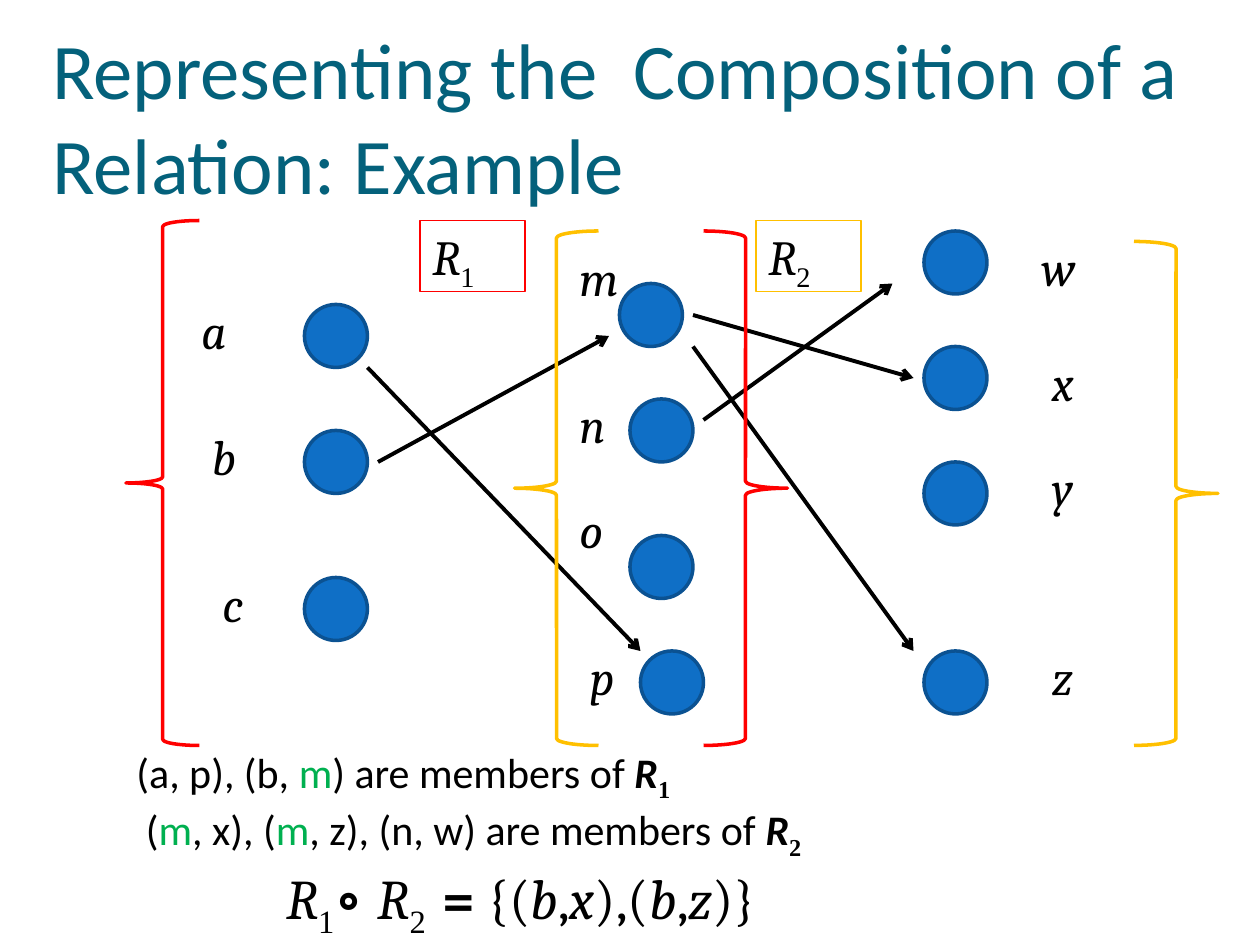
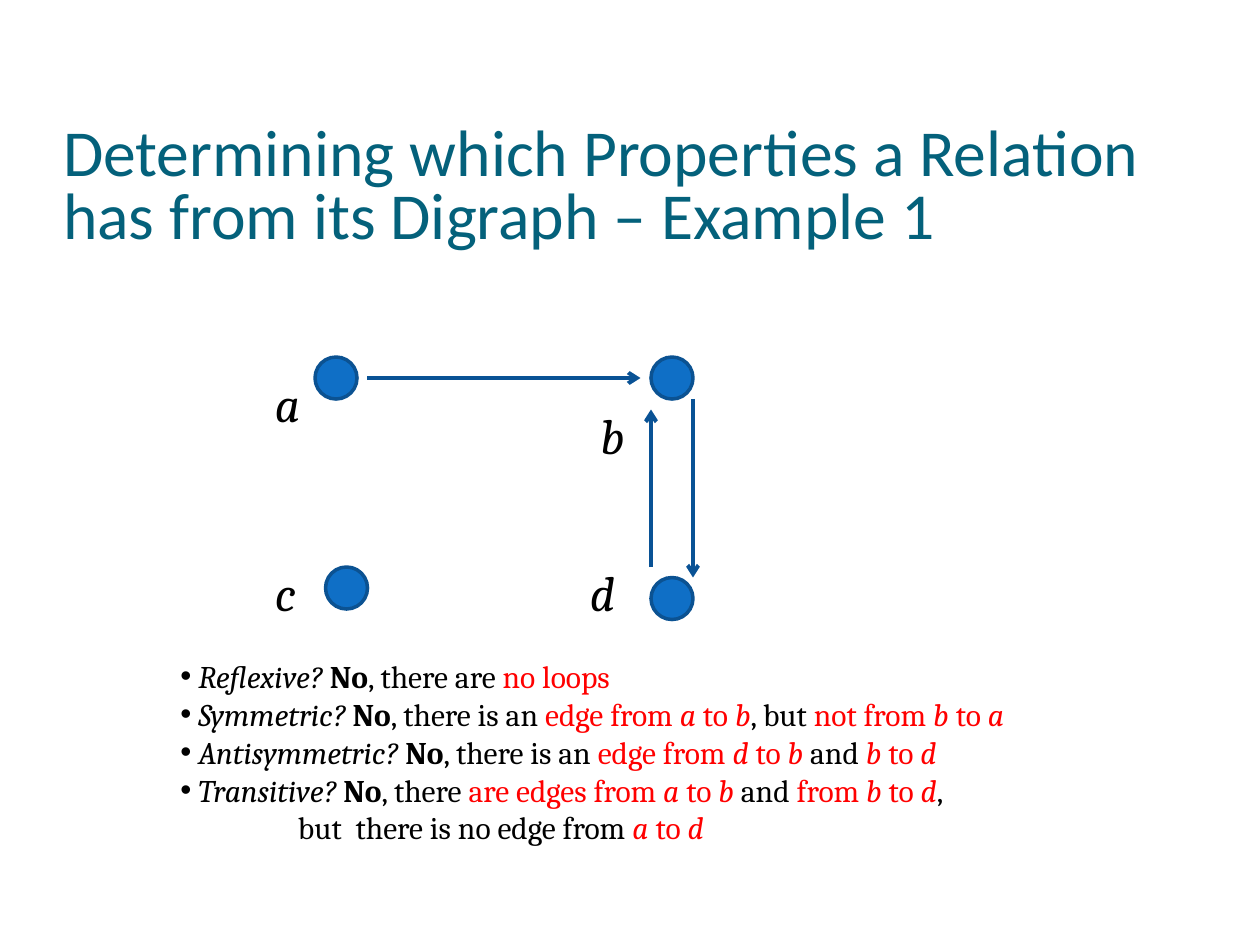
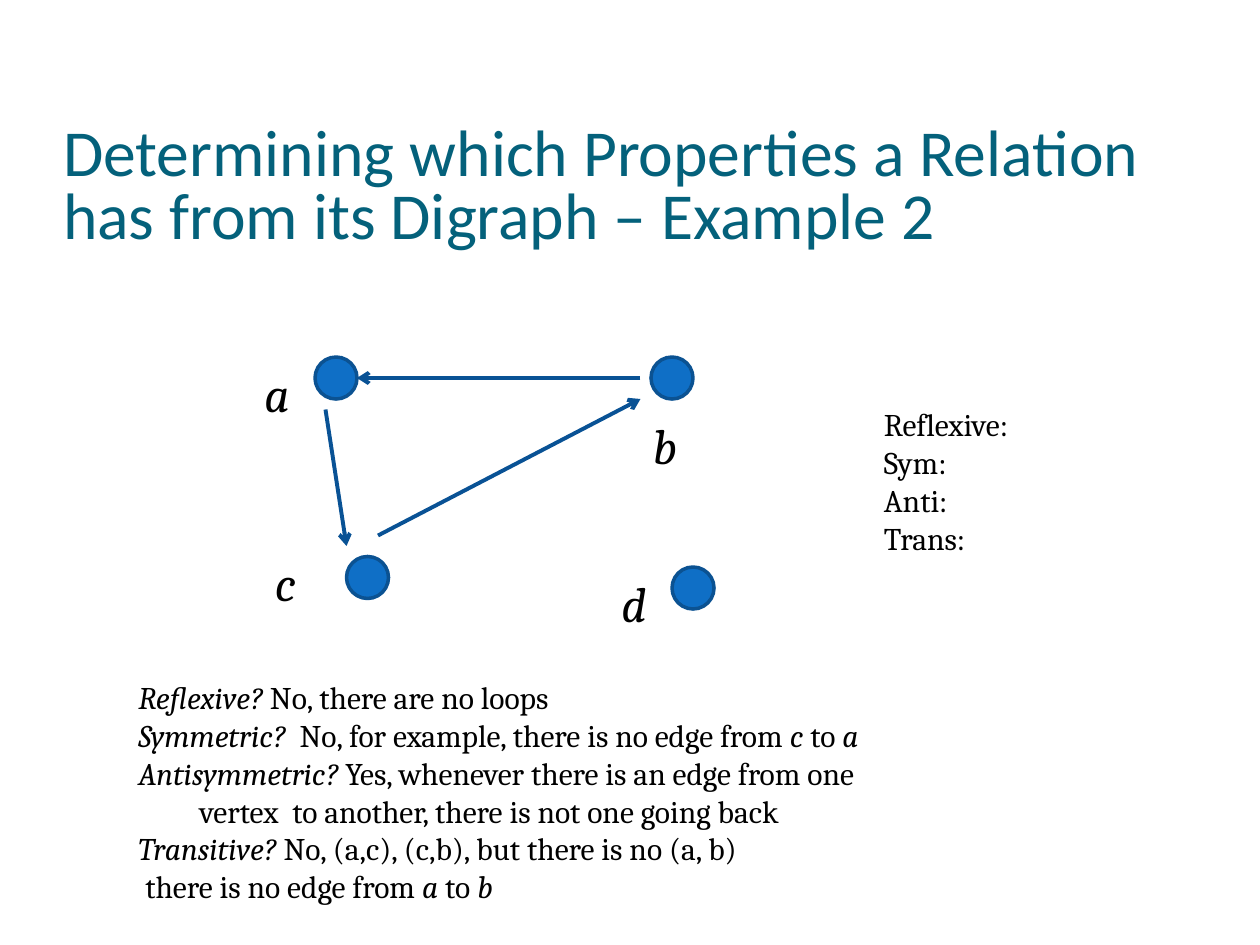
import pptx
import pptx.util
import pptx.dml.color
import pptx.enum.shapes
import pptx.enum.text
import pptx.oxml.ns
import lxml.etree

SCALE = 914400 // 120  # EMU in one px
COLORS = {
    "title": "04617B", "text": "000000", "red": "FF0000", "gold": "FFC000",
    "green": "00B050", "node": "0F6FC6", "rim": "0B5292", "edge": "095295",
}
SHAPE = pptx.enum.shapes.MSO_SHAPE
ANCHOR = pptx.enum.text.MSO_ANCHOR
FIT = pptx.enum.text.MSO_AUTO_SIZE
# One letter per text style; a run is written "letters|words".
STYLES = {
    "i": {"italic": True},
    "b": {"bold": True},
    "t": {"size": pptx.util.Pt(18)},
    "n": {"name": "Times New Roman"},
    "s": {"name": "Times New Roman"},
}
TINTS = {"r": "red", "g": "green"}
LABEL = (50, 68)


def px(*sizes):
    return [pptx.util.Emu(size * SCALE) for size in sizes]


def rgb(name):
    return pptx.dml.color.RGBColor.from_string(COLORS[name])


def assign(item, values):
    for key, value in values.items():
        setattr(item, key, value)


def add_tag(parent, tag, **attrs):
    node = lxml.etree.SubElement(parent, pptx.oxml.ns.qn(tag))
    for key, value in attrs.items():
        node.set(key, value)


def add_run(para, part, font, size):
    """Add one run written as "letters|words"."""
    marks, _, words = part.rpartition("|")
    run = para.add_run()
    run.text = words
    assign(run.font, {"name": font, "size": pptx.util.Pt(size)})
    run.font.color.rgb = rgb("text")
    for mark in marks:
        assign(run.font, STYLES.get(mark, {}))
        if mark in TINTS:
            run.font.color.rgb = rgb(TINTS[mark])
    if "s" in marks:
        run.font._element.set("baseline", "-25000")


def add_text(slide, box, lines, font="Cambria", size=18, bullets=0, indents=None):
    """Add lines of runs; the first few may be bulleted, others indented."""
    shape = slide.shapes.add_textbox(*px(*box))
    frame = shape.text_frame
    assign(frame, {"word_wrap": True, "auto_size": FIT.SHAPE_TO_FIT_TEXT})
    for row, parts in enumerate(lines):
        para = frame.paragraphs[0] if row == 0 else frame.add_paragraph()
        props = para._p.get_or_add_pPr()
        props.set("marL", str((indents or {}).get(row, 0) * SCALE))
        props.set("indent", "0")
        if row < bullets:
            add_tag(props, "a:buFont", typeface="Arial")
            add_tag(props, "a:buChar", char="•")
        for part in parts:
            add_run(para, part, font, size)
    return shape


def snug(frame):
    """Set text on the floor of its box with no side margins."""
    left, top = px(0, 6)
    assign(frame, {
        "margin_left": left, "margin_right": left, "margin_top": top,
        "margin_bottom": left, "vertical_anchor": ANCHOR.BOTTOM,
        "word_wrap": True, "auto_size": FIT.NONE,
    })


def add_slide(deck, words, spot, size, spacing):
    slide = deck.slides.add_slide(deck.slide_layouts[5])
    title = slide.shapes.title
    left, top, width, height = px(*spot, 1080, 150)
    assign(title, {"left": left, "top": top, "width": width, "height": height})
    snug(title.text_frame)
    title.text_frame.text = words
    para = title.text_frame.paragraphs[0]
    assign(para, {"alignment": pptx.enum.text.PP_ALIGN.LEFT, "line_spacing": spacing})
    assign(para.runs[0].font, {"name": "Calibri", "size": pptx.util.Pt(size)})
    para.runs[0].font.color.rgb = rgb("title")
    return slide


def add_node(slide, box):
    node = slide.shapes.add_shape(SHAPE.OVAL, *px(*box))
    node.shadow.inherit = False
    node.fill.solid()
    node.fill.fore_color.rgb = rgb("node")
    node.line.color.rgb = rgb("rim")
    node.line.width = pptx.util.Pt(2)


def add_edge(slide, ends, color):
    kind = pptx.enum.shapes.MSO_CONNECTOR.STRAIGHT
    edge = slide.shapes.add_connector(kind, *px(*ends))
    edge.line.color.rgb = rgb(color)
    edge.line.width = pptx.util.Pt(2.25)
    props = edge._element.spPr
    add_tag(props.find(pptx.oxml.ns.qn("a:ln")), "a:tailEnd", type="arrow")
    add_tag(props, "a:effectLst")


def add_brace(slide, box, kind, color):
    brace = slide.shapes.add_shape(kind, *px(*box))
    brace.shadow.inherit = False
    brace.fill.background()
    brace.line.color.rgb = rgb(color)
    brace.line.width = pptx.util.Pt(2)


def add_graph(slide, spot, side, nodes, edges, color):
    """Draw nodes {name: (node x, y, label x, y)} and arrows from a corner."""
    left, top = spot
    for name, (x, y, tag_x, tag_y) in nodes.items():
        add_node(slide, (left + x, top + y, side, side))
        add_text(slide, (left + tag_x, top + tag_y, *LABEL), [["i|" + name]], size=28)
    for x1, y1, x2, y2 in edges:
        add_edge(slide, (left + x1, top + y1, left + x2, top + y2), color)


def add_sets(slide, spot):
    """Draw the braces and the name of each relation."""
    left, top = spot
    braces = [
        (550, 10, 80, 490, SHAPE.RIGHT_BRACE, "red"),
        (0, 0, 70, 500, SHAPE.LEFT_BRACE, "red"),
        (960, 20, 80, 480, SHAPE.RIGHT_BRACE, "gold"),
        (370, 10, 80, 490, SHAPE.LEFT_BRACE, "gold"),
    ]
    for x, y, width, height, kind, color in braces:
        add_brace(slide, (left + x, top + y, width, height), kind, color)
    for x, digit, color in [(280, "1", "red"), (600, "2", "gold")]:
        tag = add_text(slide, (left + x, top, 100, 68), [["i|R", "s|" + digit]], size=28)
        tag.line.color.rgb = rgb(color)
        tag.line.width = pptx.util.Pt(0.75)


def build_join(deck):
    slide = add_slide(deck, "Representing the  Composition of a Relation: Example",
                      (50, 50), 45, None)
    nodes = {
        "a": (170, 80, 60, 70), "b": (170, 200, 70, 190), "c": (170, 340, 80, 330),
        "m": (470, 60, 420, 20), "n": (480, 170, 420, 160),
        "o": (480, 300, 420, 260), "p": (490, 410, 430, 400),
        "w": (760, 10, 860, 10), "x": (760, 120, 870, 120),
        "y": (760, 230, 870, 220), "z": (760, 410, 870, 400),
    }
    edges = [(240, 230, 460, 110), (230, 140, 490, 410), (550, 190, 730, 60),
             (540, 90, 750, 150), (540, 120, 750, 410)]
    spot = (120, 210)
    add_graph(slide, spot, 60, nodes, edges, "text")
    add_sets(slide, spot)
    add_text(slide, (254, 817, 620, 77), [[
        "bt| ", "i|R", "s|1", "bn|∘ ", "i|R", "s|2  ", "b|= ", "{(", "i|b", ",",
        "i|x", "),(", "i|b", ",", "i|z", ")}"]], size=32)
    members = add_text(slide, (130, 670, 1070, 150), [
        ["(a, p), (b, ", "g|m", ") are members of ", "bi|R", "bs|1"],
        [" (", "g|m", ", x), (", "g|m", ", z), (n, w) are members of ", "bi|R", "bs|2"],
    ], font="Calibri", size=24)
    snug(members.text_frame)


def build_graph(deck, number, nodes, edges):
    words = f"Determining which Properties a Relation has from its Digraph – Example {number}"
    slide = add_slide(deck, words, (60, 90), 37.5, 0.8)
    add_graph(slide, (240, 340), 40, nodes, edges, "edge")
    return slide


def build_first(deck):
    nodes = {"a": (60, 0, 10, 10), "b": (380, 0, 320, 40),
             "c": (70, 200, 10, 190), "d": (380, 210, 310, 190)}
    edges = [(110, 20, 370, 20), (380, 200, 380, 50), (420, 40, 420, 210)]
    slide = build_graph(deck, 1, nodes, edges)
    add_text(slide, (160, 620, 960, 194), [
        [" ", "i|Reflexive? ", "b|No", ", there are ", "r|no loops"],
        [" ", "i|Symmetric? ", "b|No", ", there is an ", "r|edge from ", "ri|a", "r| to ",
         "ri|b", ", but ", "r|not from ", "ri|b", "r| to ", "ri|a"],
        [" ", "i|Antisymmetric? ", "b|No", ", there is an ", "r|edge from ", "ri|d",
         "r| to ", "ri|b ", "and ", "ri|b", "r| to ", "ri|d"],
        [" ", "i|Transitive? ", "b|No", ", there ", "r|are edges from ", "ri|a", "r| to ",
         "ri|b ", "and ", "r|from ", "ri|b", "r| to ", "ri|d", ","],
        ["but  there is no edge from ", "ri|a", "r| to ", "ri|d"],
    ], bullets=4, indents={4: 112})


def build_second(deck):
    nodes = {"a": (60, 0, 0, 0), "b": (380, 0, 370, 50),
             "c": (90, 190, 10, 180), "d": (400, 200, 340, 200)}
    edges = [(370, 20, 100, 20), (70, 50, 90, 180), (120, 170, 370, 40)]
    slide = build_graph(deck, 2, nodes, edges)
    add_text(slide, (120, 640, 870, 266), [
        ["i|Reflexive?", " No, there are no loops"],
        ["i|Symmetric?", "  No, for example, there is no edge from ", "i|c", " to ", "i|a"],
        ["i|Antisymmetric?", " Yes, whenever there is an edge from one"],
        ["vertex  to another, there is not one going back"],
        ["i|Transitive? ", "No, (a,c), (c,b), but there is no (a, b)"],
        [" there is no edge from ", "i|a", " to ", "i|b"],
    ], indents={3: 58})
    add_text(slide, (830, 380, 320, 157),
             [["Reflexive:"], ["Sym:"], ["Anti:"], ["Trans:"]])


def main():
    deck = pptx.Presentation()
    deck.slide_width, deck.slide_height = px(1200, 900)
    build_join(deck)
    build_first(deck)
    build_second(deck)
    deck.save("out.pptx")


if __name__ == "__main__":
    main()
